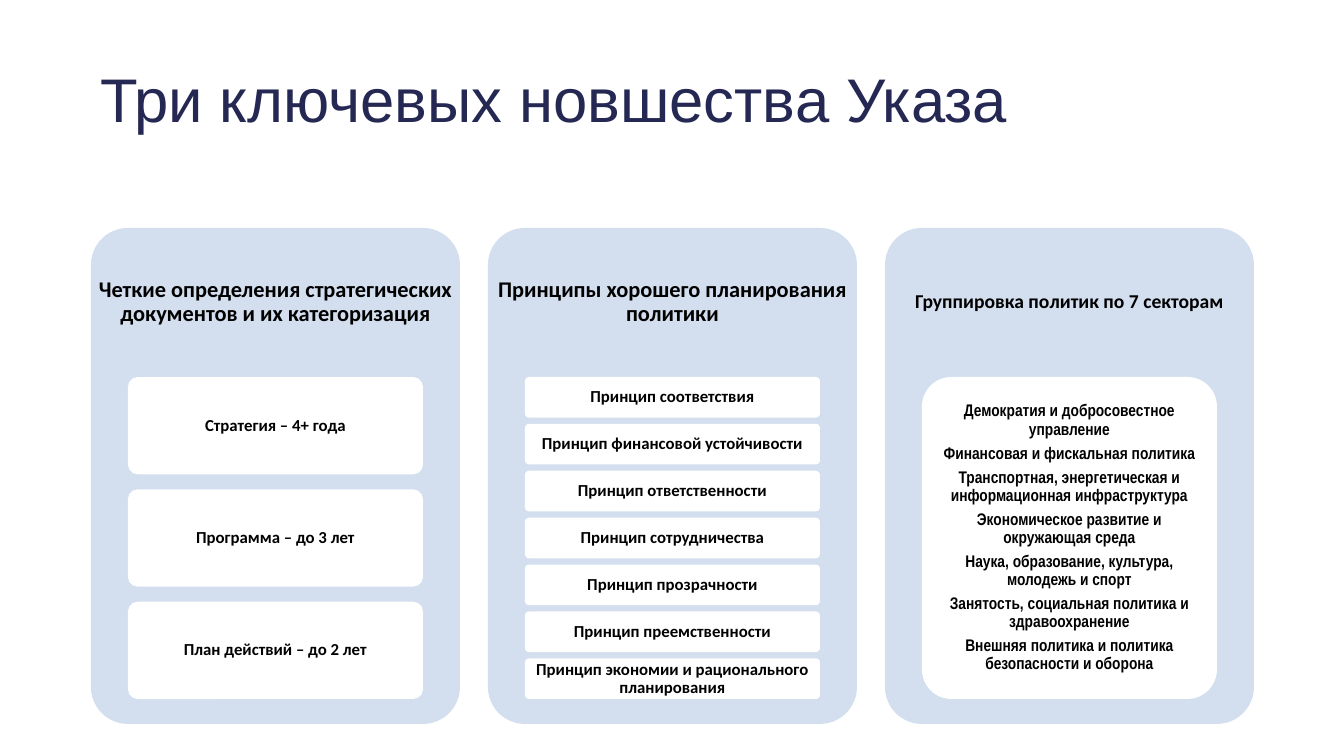
from dataclasses import dataclass

import pptx
import pptx.dml.color
import pptx.enum.shapes
import pptx.enum.text
import pptx.shapes.autoshape
import pptx.slide
import pptx.text.text
import pptx.util

SLIDE_WIDTH, SLIDE_HEIGHT = 1344, 756
EMU_PER_PX = 12192000 / SLIDE_WIDTH

NAVY = pptx.dml.color.RGBColor(0x24, 0x28, 0x52)
PALE_BLUE = pptx.dml.color.RGBColor(0xD3, 0xDF, 0xEE)
WHITE = pptx.dml.color.RGBColor(0xFF, 0xFF, 0xFF)
BLACK = pptx.dml.color.RGBColor(0x00, 0x00, 0x00)

PANEL_LEFT, PANEL_TOP, PANEL_WIDTH, PANEL_HEIGHT = 91, 228, 369, 496
PANEL_PITCH = 397
HEADING_HEIGHT = 149
CARD_INDENT, CARD_WIDTH = 37, 295
CARDS_TOP, CARDS_HEIGHT = 377, 322
GAP_RATIO = 2 / 13  # gap between cards, as a share of card height


@dataclass(frozen=True)
class Panel:
    heading: str
    cards: list[list[str]]  # each card is a list of paragraphs
    heading_size: int = 16
    card_font: str = "Calibri"


PANELS = [
    Panel(
        "Четкие определения стратегических документов и их категоризация",
        [["Стратегия – 4+ года"], ["Программа – до 3 лет"], ["План действий – до 2 лет"]],
    ),
    Panel(
        "Принципы хорошего планирования политики",
        [
            ["Принцип соответствия"],
            ["Принцип финансовой устойчивости"],
            ["Принцип ответственности"],
            ["Принцип сотрудничества"],
            ["Принцип прозрачности"],
            ["Принцип преемственности"],
            ["Принцип экономии и рационального планирования"],
        ],
    ),
    Panel(
        "Группировка политик по 7 секторам",
        [[
            "Демократия и добросовестное управление",
            "Финансовая и фискальная политика",
            "Транспортная, энергетическая и информационная инфраструктура",
            "Экономическое развитие и окружающая среда",
            "Наука, образование, культура, молодежь и спорт",
            "Занятость, социальная политика и здравоохранение",
            "Внешняя политика и политика безопасности и оборона",
        ]],
        heading_size=14,
        card_font="Arial Narrow",
    ),
]


def px(length: float) -> pptx.util.Emu:
    return pptx.util.Emu(round(length * EMU_PER_PX))


def write_text(
    frame: pptx.text.text.TextFrame,
    lines: list[str],
    *,
    size: int,
    font: str = "Calibri",
    color: pptx.dml.color.RGBColor = BLACK,
    bold: bool = True,
    align: pptx.enum.text.PP_ALIGN = pptx.enum.text.PP_ALIGN.CENTER,
    margin: int = 3,
) -> None:
    frame.word_wrap = True
    frame.auto_size = pptx.enum.text.MSO_AUTO_SIZE.NONE
    frame.vertical_anchor = pptx.enum.text.MSO_ANCHOR.MIDDLE
    frame.margin_left = frame.margin_right = px(margin)
    frame.margin_top = frame.margin_bottom = px(margin)
    for index, line in enumerate(lines):
        paragraph = frame.add_paragraph() if index else frame.paragraphs[0]
        paragraph.alignment = align
        paragraph.line_spacing = 0.9
        if index < len(lines) - 1:
            paragraph.space_after = pptx.util.Pt(0.35 * size)
        run = paragraph.add_run()
        run.text = line
        run.font.size = pptx.util.Pt(size)
        run.font.name = font
        run.font.bold = bold
        run.font.color.rgb = color


def add_rounded_box(
    slide: pptx.slide.Slide,
    left: float,
    top: float,
    width: float,
    height: float,
    fill: pptx.dml.color.RGBColor,
) -> pptx.shapes.autoshape.Shape:
    shape = slide.shapes.add_shape(
        pptx.enum.shapes.MSO_SHAPE.ROUNDED_RECTANGLE,
        px(left), px(top), px(width), px(height),
    )
    shape.adjustments[0] = 0.1
    shape.shadow.inherit = False
    shape.fill.solid()
    shape.fill.fore_color.rgb = fill
    shape.line.fill.background()
    return shape


def add_panel(slide: pptx.slide.Slide, panel: Panel, left: int) -> None:
    add_rounded_box(slide, left, PANEL_TOP, PANEL_WIDTH, PANEL_HEIGHT, PALE_BLUE)
    heading = slide.shapes.add_textbox(
        px(left), px(PANEL_TOP), px(PANEL_WIDTH), px(HEADING_HEIGHT)
    )
    write_text(heading.text_frame, [panel.heading], size=panel.heading_size, margin=6)

    count = len(panel.cards)
    card_height = CARDS_HEIGHT / (count + (count - 1) * GAP_RATIO)
    for index, lines in enumerate(panel.cards):
        top = CARDS_TOP + index * card_height * (1 + GAP_RATIO)
        card = add_rounded_box(
            slide, left + CARD_INDENT, top, CARD_WIDTH, card_height, WHITE
        )
        write_text(card.text_frame, lines, size=12, font=panel.card_font)


def main() -> None:
    presentation = pptx.Presentation()
    presentation.slide_width = px(SLIDE_WIDTH)
    presentation.slide_height = px(SLIDE_HEIGHT)
    slide = presentation.slides.add_slide(presentation.slide_layouts[5])

    title = slide.shapes.title
    title.left, title.top, title.width, title.height = px(90), px(49), px(1230), px(107)
    write_text(
        title.text_frame,
        ["Три ключевых новшества Указа"],
        size=44,
        font="Arial",
        color=NAVY,
        bold=False,
        align=pptx.enum.text.PP_ALIGN.LEFT,
        margin=10,
    )
    for index, panel in enumerate(PANELS):
        add_panel(slide, panel, PANEL_LEFT + index * PANEL_PITCH)

    presentation.save("out.pptx")


if __name__ == "__main__":
    main()
